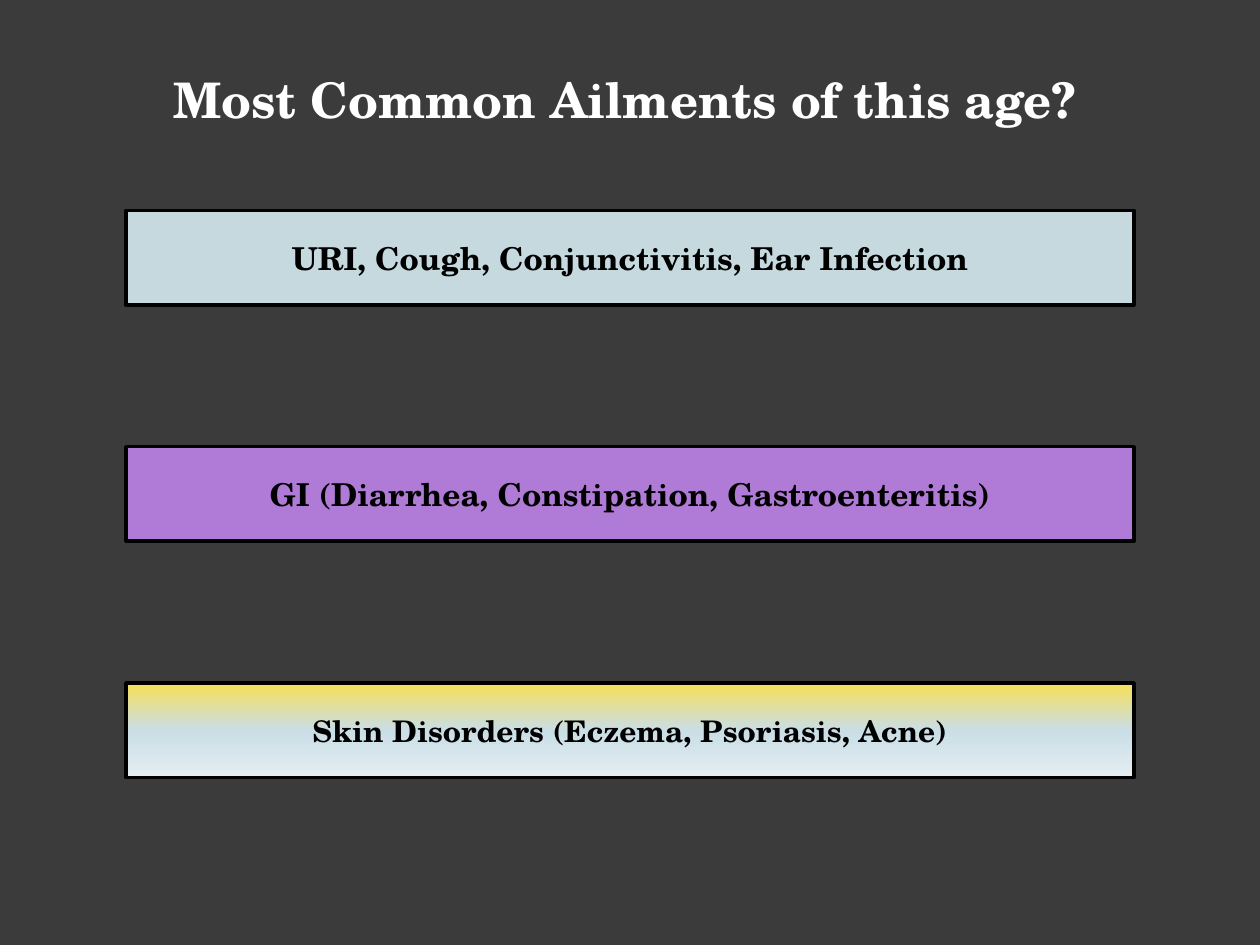
from copy import deepcopy
from dataclasses import dataclass

from pptx import Presentation
from pptx.dml.color import RGBColor
from pptx.enum.shapes import MSO_SHAPE
from pptx.enum.text import MSO_ANCHOR, MSO_AUTO_SIZE, PP_ALIGN
from pptx.oxml.ns import qn
from pptx.util import Inches, Pt


@dataclass(frozen=True)
class Theme:
    """Colours, font and type sizes of the slide."""
    back: str = "3B3B3B"
    light: str = "FFFFFF"
    ink: str = "000000"
    blue: str = "C5D9DF"
    purple: str = "B07BD7"
    blend: tuple = ((0, "F7DF56"), (0.5, "CADEE6"), (1, "E5EEF2"))
    font: str = "TeX Gyre Schola"
    head: int = 28
    body: int = 18
    small: int = 17


THEME = Theme()


def rgb(code):
    """Turn a hex code into a colour."""
    return RGBColor.from_string(code)


def put_text(shape, text, *, size, color, anchor=MSO_ANCHOR.MIDDLE):
    """Write bold centred text into a shape."""
    frame = shape.text_frame
    frame.word_wrap = True
    frame.auto_size = MSO_AUTO_SIZE.NONE
    frame.vertical_anchor = anchor
    para = frame.paragraphs[0]
    para.alignment = PP_ALIGN.CENTER
    run = para.add_run()
    run.text = text
    font = run.font
    font.name, font.size, font.bold = THEME.font, Pt(size), True
    font.color.rgb = rgb(color)


def blend_fill(shape, stops):
    """Fill a shape with colour stops running from top to bottom."""
    fill = shape.fill
    fill.gradient()
    fill.gradient_angle = 270
    group = shape._element.spPr.find(qn("a:gradFill")).find(qn("a:gsLst"))
    while len(group) < len(stops):
        group.append(deepcopy(group[0]))
    for stop, (place, color) in zip(fill.gradient_stops, stops):
        stop.position = place
        stop.color.rgb = rgb(color)


def add_title(slide, text):
    """Place the slide title."""
    title = slide.shapes.title
    title.left, title.top = Inches(0.67), Inches(0.5)
    title.width, title.height = Inches(8.58), Inches(0.88)
    put_text(title, text, size=THEME.head, color=THEME.light,
             anchor=MSO_ANCHOR.TOP)


def add_bar(slide, top, text, paint, size, kind=MSO_SHAPE.RECTANGLE):
    """Add an outlined bar with a plain or blended fill."""
    bar = slide.shapes.add_shape(
        kind, Inches(1), Inches(top), Inches(8), Inches(0.75))
    bar.shadow.inherit = False
    if isinstance(paint, str):
        bar.fill.solid()
        bar.fill.fore_color.rgb = rgb(paint)
    else:
        blend_fill(bar, paint)
    bar.line.color.rgb = rgb(THEME.ink)
    bar.line.width = Pt(2)
    put_text(bar, text, size=size, color=THEME.ink)


def main():
    """Build the slide and save it."""
    deck = Presentation()
    deck.slide_width, deck.slide_height = Inches(10), Inches(7.5)
    slide = deck.slides.add_slide(deck.slide_layouts[5])
    slide.background.fill.solid()
    slide.background.fill.fore_color.rgb = rgb(THEME.back)
    add_title(slide, "Most Common Ailments of this age?")
    bars = (
        ("URI, Cough, Conjunctivitis, Ear Infection",
         THEME.blue, THEME.body),
        ("GI (Diarrhea, Constipation, Gastroenteritis)",
         THEME.purple, THEME.body),
        ("Skin Disorders (Eczema, Psoriasis, Acne)",
         THEME.blend, THEME.small, MSO_SHAPE.FLOWCHART_PROCESS),
    )
    for row, bar in enumerate(bars):
        add_bar(slide, 1.67 + 1.875 * row, *bar)
    deck.save("out.pptx")


if __name__ == "__main__":
    main()
